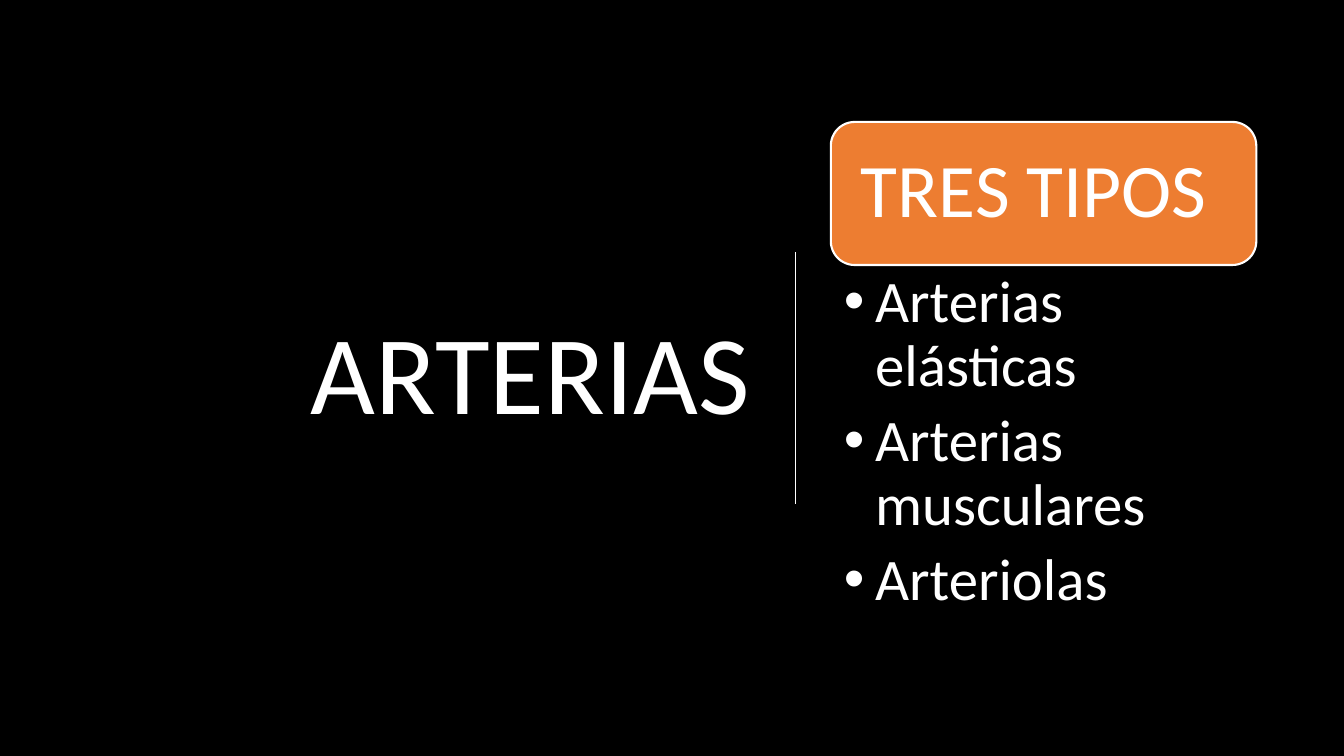
from lxml import etree
from pptx import Presentation
from pptx import util as u
from pptx.dml.color import RGBColor
from pptx.enum import shapes, text
from pptx.oxml.ns import qn

COLORS = {"back": "000000", "ink": "FFFFFF", "card": "ED7D31"}
COLORS = {name: RGBColor.from_string(value) for name, value in COLORS.items()}

deck = Presentation()
deck.slide_width, deck.slide_height = u.Inches(13.33), u.Inches(7.5)
page = deck.slides.add_slide(deck.slide_layouts[1])
page.background.fill.solid()
page.background.fill.fore_color.rgb = COLORS["back"]


def area(left, top, width, height):
    """Turn percentages of the slide into lengths."""
    across, down = deck.slide_width / 100, deck.slide_height / 100
    return [int(left * across), int(top * down), int(width * across), int(height * down)]


def format_text(box, size, align, anchor, insets):
    frame = box.text_frame
    frame.word_wrap = True
    frame.auto_size = text.MSO_AUTO_SIZE.NONE
    frame.vertical_anchor = anchor
    (frame.margin_left, frame.margin_top,
     frame.margin_right, frame.margin_bottom) = [u.Inches(inset) for inset in insets]
    for para in frame.paragraphs:
        para.alignment = align
        para.line_spacing = 0.9
        para.space_before = u.Pt(0)
        for span in para.runs:
            span.font.name = "Calibri"
            span.font.size = u.Pt(size)
            span.font.color.rgb = COLORS["ink"]


# Columns and rows, in percent of the slide
types_left, types_width = 61.82, 31.66
card_top, card_height = 16.13, 18.93
list_top = card_top + card_height

# Title
title = page.shapes.title
title.left, title.top, title.width, title.height = area(6.9, 15.6, 49.66, 68.93)
title.text_frame.text = "ARTERIAS"
format_text(title, 80, text.PP_ALIGN.RIGHT, text.MSO_ANCHOR.MIDDLE, (0.1, 0.05, 0.1, 0.05))

# Divider, one third of the slide high
x, y, _, length = area(59.19, 100 / 3, 0, 100 / 3)
divider = page.shapes.add_connector(shapes.MSO_CONNECTOR.STRAIGHT, x, y, x, y + length)
divider.line.color.rgb = COLORS["ink"]
divider.line.width = u.Pt(1.25)
etree.SubElement(divider._element.spPr, qn("a:effectLst"))

# Heading card
card = page.shapes.add_shape(shapes.MSO_SHAPE.ROUNDED_RECTANGLE,
                             *area(types_left, card_top, types_width, card_height))
card.shadow.inherit = False
card.fill.solid()
card.fill.fore_color.rgb = COLORS["card"]
card.line.color.rgb = COLORS["ink"]
card.line.width = u.Pt(1.5)
card.text_frame.text = "TRES TIPOS"
format_text(card, 54, text.PP_ALIGN.LEFT, text.MSO_ANCHOR.MIDDLE, (0.23,) * 4)

# List of artery types
types = page.placeholders[1]
types.left, types.top, types.width, types.height = area(types_left, list_top, types_width, 48.93)
types.text_frame.text = "Arterias elásticas\nArterias musculares\nArteriolas"
format_text(types, 42, text.PP_ALIGN.LEFT, text.MSO_ANCHOR.TOP, (0.13, 0.07, 0.42, 0.07))
for para in types.text_frame.paragraphs:
    para.space_after = u.Pt(8.4)
    props = para._p.get_or_add_pPr()
    props.set("marL", str(u.Inches(0.31)))
    props.set("indent", str(-u.Inches(0.31)))
    etree.SubElement(props, qn("a:buChar"), char="•")

deck.save("out.pptx")
